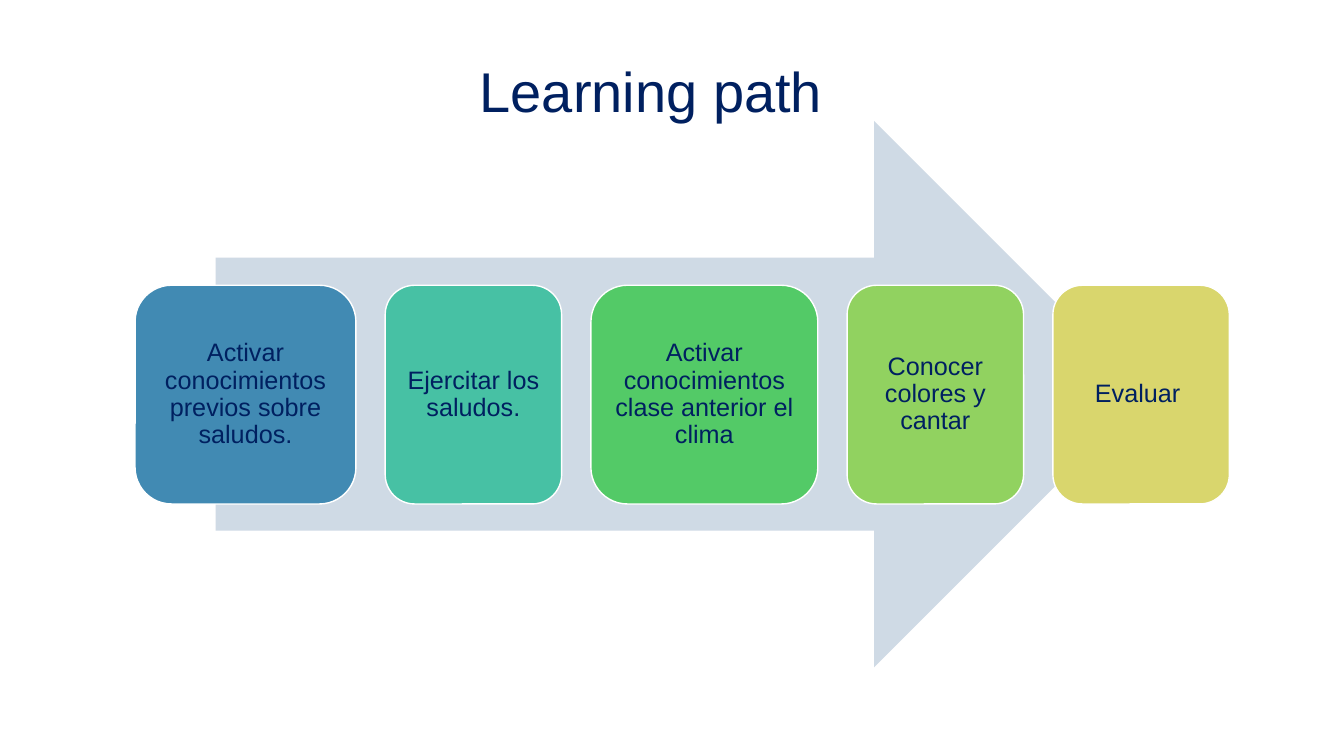
from pptx import Presentation
from pptx.dml.color import RGBColor
from pptx.enum.shapes import MSO_SHAPE as Shape
from pptx.enum.text import MSO_ANCHOR as Anchor, PP_ALIGN as Align
from pptx.util import Inches, Pt

COLUMNS = ROWS = 100


def color(hex_value):
    return RGBColor.from_string(hex_value)


class PathSlide:
    """Holds the style and the current slide; lengths are grid columns and rows."""

    FONT, INK, EDGE = "Arial", "002060", "FFFFFF"

    def __init__(self, presentation):
        self.slide = presentation.slides.add_slide(presentation.slide_layouts[6])
        self.column = presentation.slide_width / COLUMNS
        self.row = presentation.slide_height / ROWS

    def place(self, left, top, width, height):
        return (round(left * self.column), round(top * self.row),
                round(width * self.column), round(height * self.row))

    def set_text(self, shape, text, size, **frame_format):
        frame = shape.text_frame
        for name, value in {"word_wrap": True, **frame_format}.items():
            setattr(frame, name, value)
        paragraph = frame.paragraphs[0]
        paragraph.text = text
        for name, value in {"alignment": Align.CENTER, "line_spacing": 0.9}.items():
            setattr(paragraph, name, value)
        for name, value in {"name": self.FONT, "size": Pt(size)}.items():
            setattr(paragraph.font, name, value)
        paragraph.font.color.rgb = color(self.INK)

    def title(self, text, *box):
        shape = self.slide.shapes.add_textbox(*self.place(*box))
        self.set_text(shape, text, 40, vertical_anchor=Anchor.BOTTOM)

    def block(self, kind, fill, *box):
        shape = self.slide.shapes.add_shape(kind, *self.place(*box))
        shape.shadow.inherit = False
        shape.fill.solid()
        shape.fill.fore_color.rgb = color(fill)
        shape.line.fill.background()
        return shape

    def step(self, text, fill, *box):
        shape = self.block(Shape.ROUNDED_RECTANGLE, fill, *box)
        shape.line.color.rgb = color(self.EDGE)
        shape.line.width = Pt(1)
        sides = ("left", "top", "right", "bottom")
        margins = {f"margin_{side}": Inches(0.07) for side in sides}
        self.set_text(shape, text, 18, vertical_anchor=Anchor.MIDDLE, **margins)


# Step text, fill and width in columns
STEPS = [
    ("Activar conocimientos previos sobre saludos.", "418AB3", 16.43),
    ("Ejercitar los saludos.", "47C1A4", 13.13),
    ("Activar conocimientos clase anterior el clima", "53CA67", 16.88),
    ("Conocer colores y cantar", "91D260", 13.13),
    ("Evaluar ", "D9D66D", 13.13),
]
STEP_LEFT, STEP_TOP, STEP_HEIGHT, STEP_GAP = 10.05, 37.73, 28.93, 2.18


def main():
    presentation = Presentation()
    presentation.slide_width = Inches(13.33)
    presentation.slide_height = Inches(7.5)
    page = PathSlide(presentation)

    # Title and the arrow behind the steps
    page.title("Learning path", 9.98, 6.27, 76.89, 10.93)
    page.block(Shape.RIGHT_ARROW, "CFDAE5", 16.05, 16, 69.32, 72.27)

    # Steps, left to right with equal gaps
    left = STEP_LEFT
    for text, fill, width in STEPS:
        page.step(text, fill, left, STEP_TOP, width, STEP_HEIGHT)
        left += width + STEP_GAP

    presentation.save("out.pptx")


if __name__ == "__main__":
    main()
